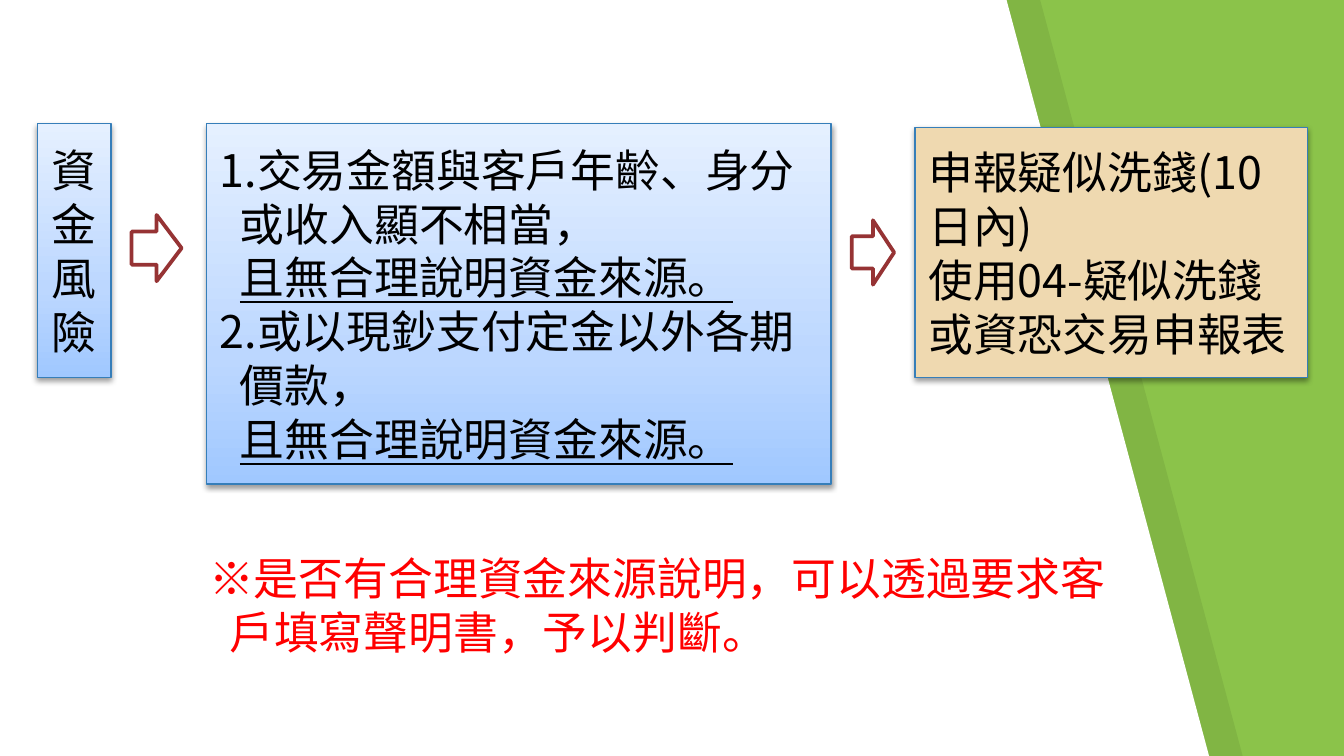
from lxml import etree
from pptx import Presentation
from pptx import util as u
from pptx.dml.color import RGBColor
from pptx.enum import shapes, text
from pptx.oxml import parse_xml
from pptx.oxml.ns import nsdecls, qn

Pt = u.Pt
FONT = "Noto Sans CJK SC"
GRADIENT = [(0, "A0C8FF"), (35, "BCD7FF"), (100, "E5F0FF")]


def color(value):
    return RGBColor.from_string(value)


def write(shape, lines, ink):
    frame = shape.text_frame
    for name, value in {"word_wrap": True, "auto_size": text.MSO_AUTO_SIZE.NONE}.items():
        setattr(frame, name, value)
    for index, (words, align, indent, underline) in enumerate(lines):
        paragraph = frame.paragraphs[0] if index == 0 else frame.add_paragraph()
        paragraph.alignment = align
        paragraph.line_spacing = Pt(28.9)
        paragraph._p.get_or_add_pPr().set("marL", str(Pt(indent)))
        run = paragraph.add_run()
        run.text = words
        for name, value in {"size": Pt(24), "name": FONT, "underline": underline}.items():
            setattr(run.font, name, value)
        run.font.color.rgb = color(ink)
        etree.SubElement(run._r.get_or_add_rPr(), qn("a:ea")).set("typeface", FONT)


presentation = Presentation()
presentation.slide_width, presentation.slide_height = Pt(720), Pt(405)
slide = presentation.slides.add_slide(presentation.slide_layouts[6])
slide.background.fill.solid()
slide.background.fill.fore_color.rgb = color("8BC34A")

for left, fill, alpha in [(18, "000000", 7), (0, "FFFFFF", 100)]:
    builder = slide.shapes.build_freeform(Pt(left), Pt(-1), scale=1.0)
    builder.add_line_segments(
        [(Pt(left), Pt(406)), (Pt(left + 648), Pt(406)), (Pt(left + 539), Pt(-1))])
    panel = builder.convert_to_shape()
    panel.shadow.inherit = False
    panel.line.fill.background()
    panel.fill.solid()
    panel.fill.fore_color.rgb = color(fill)
    if alpha < 100:
        tint = panel._element.spPr.find(".//" + qn("a:srgbClr"))
        etree.SubElement(tint, qn("a:alpha")).set("val", str(alpha * 1000))

LEFT, CENTER = text.PP_ALIGN.LEFT, text.PP_ALIGN.CENTER
source_line = ("且無合理說明資金來源。", LEFT, 10.8, True)
boxes = [
    ((20, 66.3, 39.5, 136), None, [("資金風險", CENTER, 0, False)]),
    ((110.7, 66.3, 334.5, 193), None, [
        ("1.交易金額與客戶年齡、身分", LEFT, 0, False),
        ("或收入顯不相當，", LEFT, 10.8, False),
        source_line,
        ("2.或以現鈔支付定金以外各期", LEFT, 0, False),
        ("價款，", LEFT, 10.8, False),
        source_line]),
    ((490.2, 68.3, 210.2, 134), "EFD9B0", [
        ("申報疑似洗錢(10日內)", LEFT, 0, False),
        ("使用04-疑似洗錢或資恐交易申報表", LEFT, 0, False)]),
]
for place, fill, lines in boxes:
    box = slide.shapes.add_shape(shapes.MSO_SHAPE.RECTANGLE, *map(Pt, place))
    box.shadow.inherit = False
    box.line.color.rgb = color("367EB9")
    box.line.width = Pt(0.75)
    if fill:
        box.fill.solid()
        box.fill.fore_color.rgb = color(fill)
    else:
        stops = "".join(f'<a:gs pos="{position * 1000}"><a:srgbClr val="{value}"/></a:gs>'
                        for position, value in GRADIENT)
        box._element.spPr.find(qn("a:prstGeom")).addnext(parse_xml(
            f'<a:gradFill {nsdecls("a")} rotWithShape="1"><a:gsLst>{stops}</a:gsLst>'
            '<a:lin ang="16200000" scaled="0"/></a:gradFill>'))
    box._element.spPr.find(qn("a:effectLst")).append(parse_xml(
        f'<a:outerShdw {nsdecls("a")} blurRad="{Pt(3.1)}" dist="{Pt(1.6)}" dir="5400000" '
        'rotWithShape="0"><a:srgbClr val="000000"><a:alpha val="38000"/></a:srgbClr>'
        '</a:outerShdw>'))
    box.text_frame.vertical_anchor = text.MSO_ANCHOR.MIDDLE
    write(box, lines, "000000")

for place in [(70.5, 115.2, 26.8, 35.5), (456.3, 118, 22.7, 34.5)]:
    arrow = slide.shapes.add_shape(shapes.MSO_SHAPE.RIGHT_ARROW, *map(Pt, place))
    arrow.shadow.inherit = False
    arrow.fill.solid()
    arrow.fill.fore_color.rgb = color("FFFFFF")
    arrow.line.color.rgb = color("963334")
    arrow.line.width = Pt(2)

note = slide.shapes.add_textbox(Pt(105), Pt(291.6), Pt(510.5), Pt(65.4))
write(note, [("※是否有合理資金來源說明，可以透過要求客", LEFT, 0, False),
             ("戶填寫聲明書，予以判斷。", LEFT, 10.8, False)], "FF0000")

presentation.save("out.pptx")
